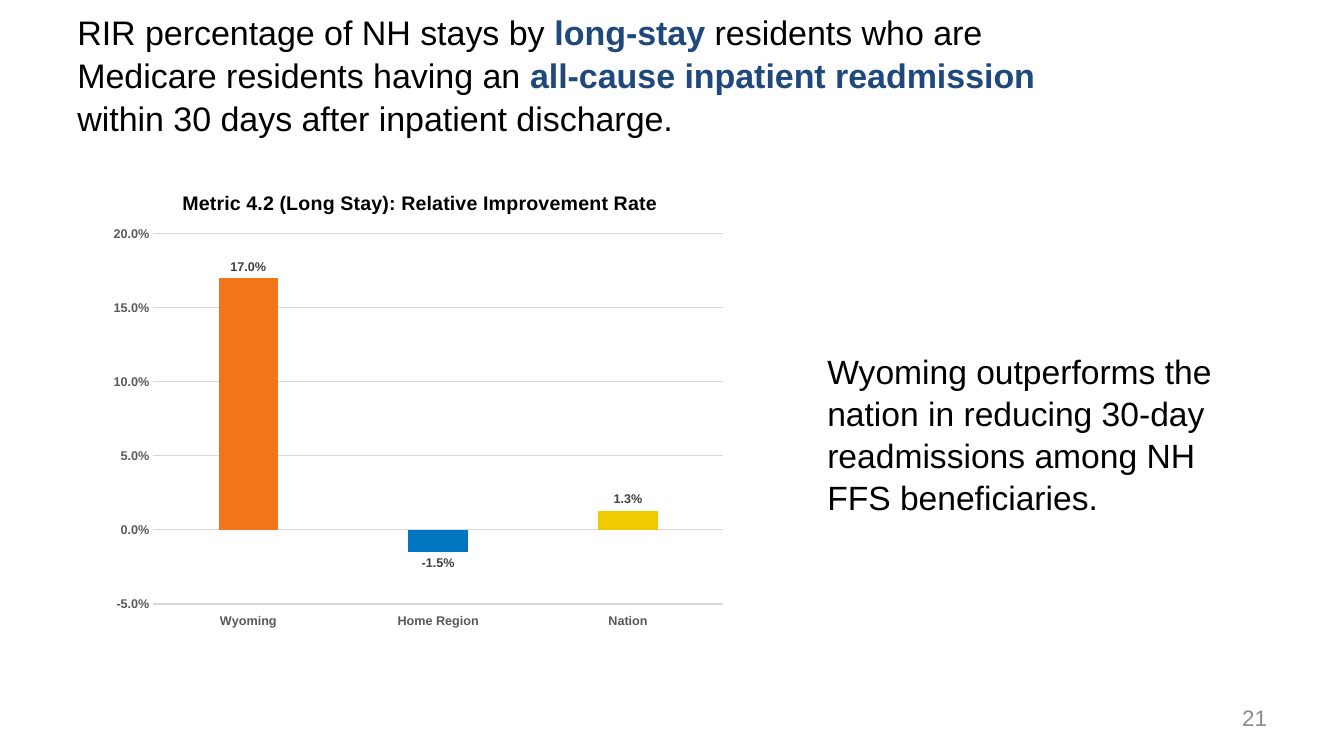
from pptx import Presentation
from pptx import util as u
from pptx.chart.data import CategoryChartData
from pptx.dml.color import RGBColor
from pptx.enum import chart as ch, text
from pptx.oxml import parse_xml
from pptx.oxml.ns import nsdecls, qn

FONT = "Arial"
BLACK, NAVY, GRAY = "000000", "1F497D", "8C8C8C"
GRID, AXIS_TEXT, LABEL_TEXT = "D9D9D9", "595959", "404040"

HEADLINE = [
    ("RIR percentage of NH stays by ", False),
    ("long-stay ", True),
    ("residents who are Medicare residents having an ", False),
    ("all-cause inpatient readmission", True),
    (" within 30 days after inpatient discharge.", False),
]
TAKEAWAY = "Wyoming outperforms the nation in reducing 30-day readmissions among NH FFS beneficiaries."
PAGE = "21"
CHART_TITLE = "Metric 4.2 (Long Stay): Relative Improvement Rate"
RATES = [
    ("Wyoming", 0.17, "F27519"),
    ("Home Region", -0.015, "0075C0"),
    ("Nation", 0.013, "F0CB00"),
]


def rgb(color):
    return RGBColor.from_string(color)


def style(font, size, color, bold=False):
    font.name, font.size, font.bold = FONT, u.Pt(size), bold
    font.color.rgb = rgb(color)


def add_text(slide, runs, box, size, color=BLACK, accent=NAVY, spacing=1.0,
             align=text.PP_ALIGN.LEFT, anchor=text.MSO_ANCHOR.TOP):
    """Add a wrapped text box; runs are (words, emphasised) pairs, box is in cm."""
    frame = slide.shapes.add_textbox(*map(u.Cm, box)).text_frame
    frame.word_wrap = True
    frame.vertical_anchor = anchor
    paragraph = frame.paragraphs[0]
    paragraph.alignment, paragraph.line_spacing = align, spacing
    for words, emphasised in runs:
        run = paragraph.add_run()
        run.text = words
        style(run.font, size, accent if emphasised else color, emphasised)


def place(part, index, target="", **fractions):
    """Fix a chart part at fractions of the chart's size."""
    for old in part.findall(qn("c:layout")):
        part.remove(old)
    modes = '<c:xMode val="edge"/><c:yMode val="edge"/>'
    values = "".join(f'<c:{key} val="{value}"/>' for key, value in fractions.items())
    part.insert(index, parse_xml(
        f'<c:layout {nsdecls("c")}><c:manualLayout>{target}{modes}{values}'
        '</c:manualLayout></c:layout>'))


def add_rate_chart(slide, box):
    names, rates, colors = zip(*RATES)
    data = CategoryChartData(number_format="0.0%")
    data.categories = names
    data.add_series("Series 1", rates)
    chart = slide.shapes.add_chart(
        ch.XL_CHART_TYPE.COLUMN_CLUSTERED, *map(u.Cm, box), data).chart
    style(chart.font, 10, BLACK, True)
    chart.has_legend = False

    heading = chart.chart_title
    heading.text_frame.text = CHART_TITLE
    style(heading.text_frame.paragraphs[0].runs[0].font, 14, BLACK, True)
    heading.include_in_layout = False
    place(heading.element, 1, x=0.12, y=0.04)
    place(chart.element.find(".//" + qn("c:plotArea")), 0,
          '<c:layoutTarget val="inner"/>', x=0.08, y=0.14, w=0.9, h=0.79)

    for axis in (chart.category_axis, chart.value_axis):
        axis.major_tick_mark = axis.minor_tick_mark = ch.XL_TICK_MARK.NONE
        style(axis.tick_labels.font, 9, AXIS_TEXT, True)
    chart.category_axis.tick_label_position = ch.XL_TICK_LABEL_POSITION.LOW
    scale = chart.value_axis
    scale.minimum_scale, scale.maximum_scale, scale.major_unit = -0.05, 0.2, 0.05
    scale.tick_labels.number_format = "0.0%"
    scale.tick_labels.number_format_is_linked = False
    scale.format.line.fill.background()
    for line in (chart.category_axis.format.line, scale.major_gridlines.format.line):
        line.color.rgb, line.width = rgb(GRID), u.Pt(0.75)

    plot = chart.plots[0]
    plot.gap_width, plot.overlap, plot.vary_by_categories = 219, -27, False
    series = plot.series[0]
    series.invert_if_negative = False
    series.format.fill.solid()
    series.format.fill.fore_color.rgb = rgb(colors[0])
    for index, color in enumerate(colors[1:], 1):
        fill = series.points[index].format.fill
        fill.solid()
        fill.fore_color.rgb = rgb(color)
    labels = series.data_labels
    labels.show_value = True
    labels.position = ch.XL_LABEL_POSITION.OUTSIDE_END
    labels.number_format, labels.number_format_is_linked = "0.0%", False
    style(labels.font, 9, LABEL_TEXT, True)


def main():
    deck = Presentation()
    deck.slide_width, deck.slide_height = u.Cm(33.87), u.Cm(19.05)
    slide = deck.slides.add_slide(deck.slide_layouts[6])
    add_text(slide, HEADLINE, (1.7, 0.05, 26.09, 3.61), 24.3, spacing=1.05,
             anchor=text.MSO_ANCHOR.MIDDLE)
    add_text(slide, [(PAGE, False)], (24.56, 17.58, 7.62, 1.02), 16, GRAY,
             align=text.PP_ALIGN.RIGHT, anchor=text.MSO_ANCHOR.MIDDLE)
    add_rate_chart(slide, (2.59, 4.24, 15.95, 11.81))
    add_text(slide, [(TAKEAWAY, False)], (20.6, 8.69, 10.95, 4.37), 24, spacing=1.04)
    deck.save("out.pptx")


if __name__ == "__main__":
    main()
